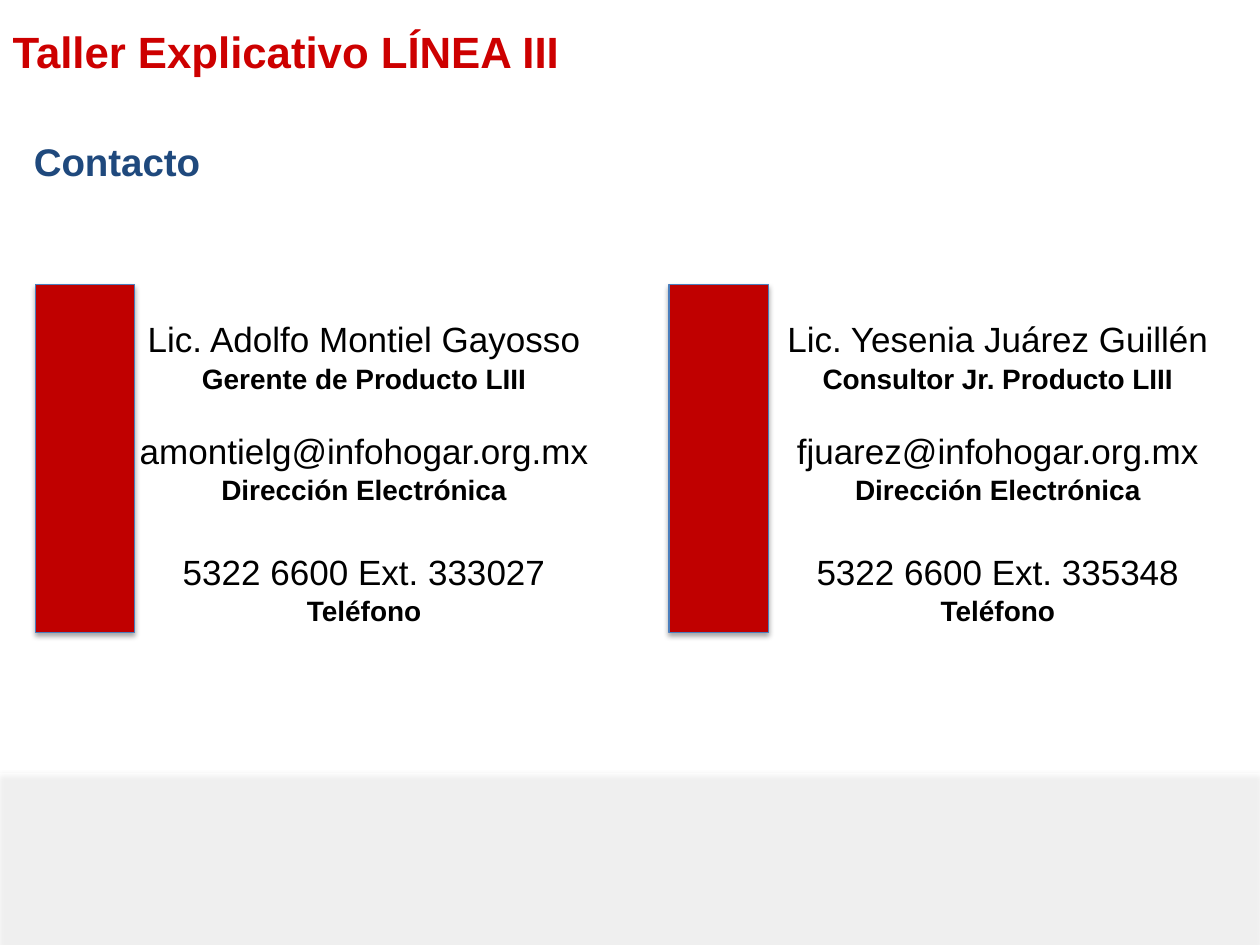
from lxml import etree
from pptx import Presentation
from pptx.dml.color import RGBColor
from pptx.enum.shapes import MSO_SHAPE
from pptx.enum.text import MSO_ANCHOR, PP_ALIGN
from pptx.oxml.ns import qn
from pptx.util import Inches, Pt

RECTANGLE = MSO_SHAPE.RECTANGLE
MIDDLE = MSO_ANCHOR.MIDDLE
LEFT, CENTER = PP_ALIGN.LEFT, PP_ALIGN.CENTER

FONT = "Arial"
COLORS = {
    "title": "CD0000",
    "heading": "1F497D",
    "bar": "C00000",
    "bar_line": "4B7EBC",
    "footer": "FFFFFF",
    "text": "000000",
    "shadow": "000000",
}
TITLE_ONLY = 5
FIRST_CONTACT_LEFT, CONTACT_STEP = 0.28, 5.03

# Each contact lists pairs of value and label
CONTACTS = [
    [("Lic. Adolfo Montiel Gayosso", "Gerente de Producto LIII"),
     ("amontielg@infohogar.org.mx", "Dirección Electrónica"),
     ("5322 6600 Ext. 333027", "Teléfono")],
    [("Lic. Yesenia Juárez Guillén", "Consultor Jr. Producto LIII"),
     ("fjuarez@infohogar.org.mx", "Dirección Electrónica"),
     ("5322 6600 Ext. 335348", "Teléfono")],
]
GAPS_BEFORE = [0, 19, 24]


def color(key):
    return RGBColor.from_string(COLORS[key])


def add_run(paragraph, text, size, color_key, bold=False):
    run = paragraph.add_run()
    run.text = text
    run.font.name = FONT
    run.font.size = Pt(size)
    run.font.bold = bold
    run.font.color.rgb = color(color_key)


def add_alpha(color_element, percent):
    etree.SubElement(color_element, qn("a:alpha"), val=str(percent * 1000))


def add_shadow(shape, percent, distance):
    """Cast a soft shadow straight down."""
    shape.shadow.inherit = False
    effects = shape._element.spPr.find(qn("a:effectLst"))
    shadow = etree.SubElement(
        effects, qn("a:outerShdw"), blurRad=str(Pt(3.1)),
        dist=str(Pt(distance)), dir="5400000", rotWithShape="0")
    tint = etree.SubElement(shadow, qn("a:srgbClr"), val=COLORS["shadow"])
    add_alpha(tint, percent)


def add_block(shapes, left, top, width, height, fill_key):
    block = shapes.add_shape(RECTANGLE, Inches(left), Inches(top),
                             Inches(width), Inches(height))
    block.fill.solid()
    block.fill.fore_color.rgb = color(fill_key)
    return block


def write_heading(shape, text, size, color_key):
    frame = shape.text_frame
    frame.word_wrap = True
    frame.vertical_anchor = MIDDLE
    paragraph = frame.paragraphs[0]
    paragraph.alignment = LEFT
    add_run(paragraph, text, size, color_key, bold=True)


def add_footer(slide):
    footer = add_block(slide.shapes, 0, 6.13, 10, 1.37, "footer")
    footer.line.fill.background()
    add_alpha(footer._element.spPr.find(".//" + qn("a:srgbClr")), 80)
    add_shadow(footer, 38, 1.6)


def add_contact(slide, left, details):
    card = slide.shapes.add_group_shape()

    # Red bar
    bar = add_block(card.shapes, left, 2.26, 0.79, 2.76, "bar")
    bar.line.color.rgb = color("bar_line")
    bar.line.width = Pt(0.75)
    add_shadow(bar, 35, 1.8)

    # Details: each value with its label below
    box = card.shapes.add_textbox(Inches(left + 0.64), Inches(2.46),
                                  Inches(3.94), Inches(2.36))
    frame = box.text_frame
    frame.word_wrap = True
    for index, (value, label) in enumerate(details):
        value_line = frame.add_paragraph() if index else frame.paragraphs[0]
        if index:
            value_line.space_before = Pt(GAPS_BEFORE[index])
        label_line = frame.add_paragraph()
        add_run(value_line, value, 20, "text")
        add_run(label_line, label, 16, "text", bold=True)
        for line in (value_line, label_line):
            line.alignment = CENTER
            line.line_spacing = 1.04


def main():
    prs = Presentation()
    prs.slide_width, prs.slide_height = Inches(10), Inches(7.5)
    slide = prs.slides.add_slide(prs.slide_layouts[TITLE_ONLY])

    # Title and section heading
    title = slide.shapes.title
    title.left, title.top = Inches(0), Inches(0.01)
    title.width, title.height = Inches(5.31), Inches(0.79)
    write_heading(title, "Taller Explicativo LÍNEA III", 25, "title")
    heading = slide.shapes.add_textbox(Inches(0.17), Inches(0.88),
                                       Inches(2.95), Inches(0.79))
    write_heading(heading, "Contacto", 22, "heading")

    add_footer(slide)

    # Contact cards
    for index, details in enumerate(CONTACTS):
        add_contact(slide, FIRST_CONTACT_LEFT + index * CONTACT_STEP, details)

    prs.save("out.pptx")


if __name__ == "__main__":
    main()
